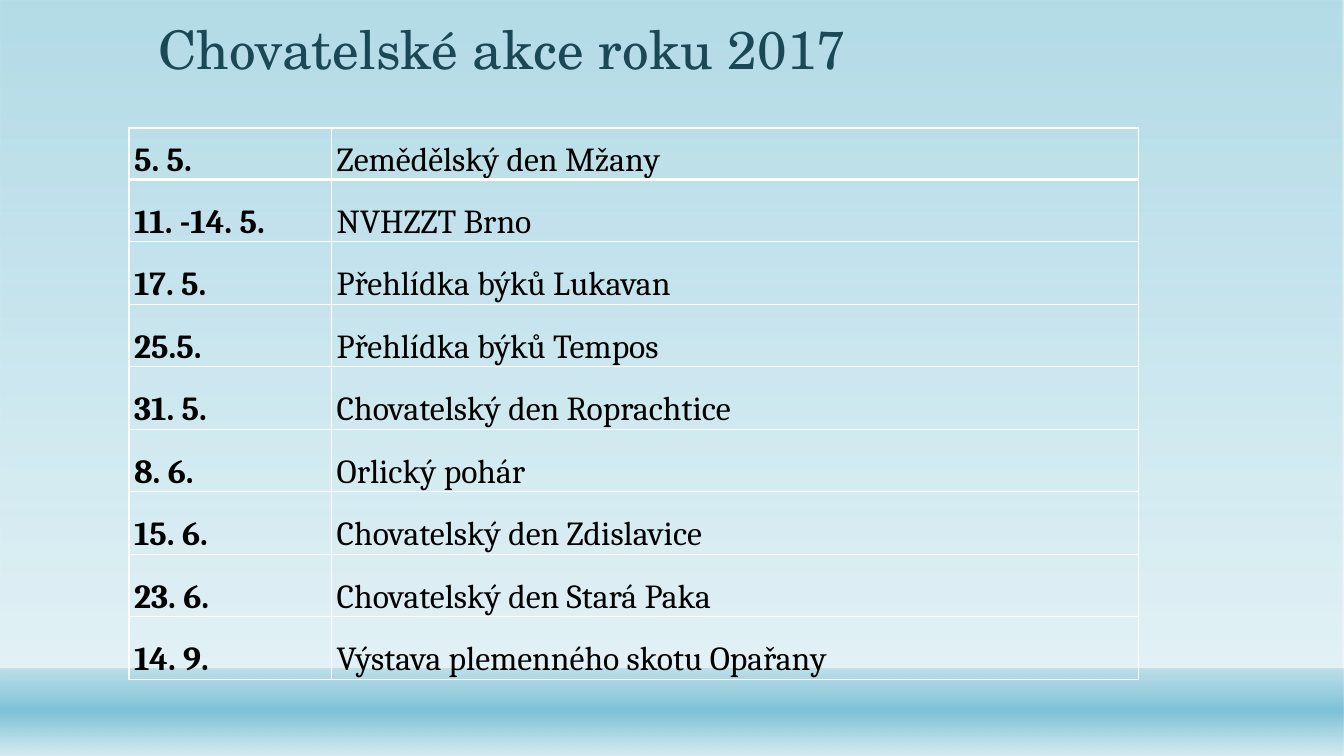
from lxml.etree import SubElement
from pptx import Presentation
from pptx.dml.color import RGBColor
from pptx.enum.shapes import MSO_SHAPE as Shape
from pptx.enum.text import MSO_ANCHOR as Anchor, MSO_AUTO_SIZE as AutoSize, PP_ALIGN as Align
from pptx.oxml.ns import qn
from pptx.util import Inches, Pt

COLORS = {
    "teal": "7DC2D6",
    "pale": "D4EBF1",
    "title": "1B4855",
    "text": "000000",
    "border": "FFFFFF",
}

EVENTS = [
    ("5. 5.", "Zemědělský den Mžany"),
    ("11. -14. 5.", "NVHZZT Brno"),
    ("17. 5.", "Přehlídka býků Lukavan"),
    ("25.5.", "Přehlídka býků Tempos"),
    ("31. 5.", "Chovatelský den Roprachtice"),
    ("8. 6.", "Orlický pohár"),
    ("15. 6.", "Chovatelský den Zdislavice"),
    ("23. 6.", "Chovatelský den Stará Paka"),
    ("14. 9.", "Výstava plemenného skotu Opařany"),
]


class EventPage:
    title_font = {"name": "TeX Gyre Schola", "size": Pt(38), "bold": False}
    cell_font = {"name": "Cambria", "size": Pt(24)}
    cell_format = {
        "vertical_anchor": Anchor.BOTTOM,
        "margin_left": Inches(0.05),
        "margin_right": Inches(0.05),
        "margin_top": 0,
        "margin_bottom": 0,
    }

    def __init__(self, deck):
        self.page = deck.slides.add_slide(deck.slide_layouts[5])

    def apply(self, target, values):
        for name, value in values.items():
            setattr(target, name, value)

    def place(self, left, top, width, height):
        names = ("left", "top", "width", "height")
        return dict(zip(names, map(Inches, (left, top, width, height))))

    def add_text(self, frame, text, spacing, font, color):
        para = frame.paragraphs[0]
        self.apply(para, {"alignment": Align.LEFT, "line_spacing": spacing})
        span = para.add_run()
        span.text = text
        self.apply(span.font, font)
        span.font.color.rgb = RGBColor.from_string(COLORS[color])

    def gradient(self, place, stops):
        box = self.page.shapes.add_shape(Shape.RECTANGLE, **self.place(*place))
        box.shadow.inherit = False
        box.line.fill.background()
        box.fill.gradient()
        box.fill.gradient_angle = 270
        stop_list = box.element.spPr.find(qn("a:gradFill")).find(qn("a:gsLst"))
        for old_stop in list(stop_list):
            stop_list.remove(old_stop)
        for position, color, opacity in stops:
            stop = SubElement(stop_list, qn("a:gs"), pos=str(position * 1000))
            tint = SubElement(stop, qn("a:srgbClr"), val=COLORS[color])
            SubElement(tint, qn("a:alpha"), val=str(opacity * 1000))

    def title(self, text, place):
        box = self.page.shapes.title
        self.apply(box, self.place(*place))
        self.apply(box.text_frame, {
            "vertical_anchor": Anchor.BOTTOM,
            "word_wrap": True,
            "auto_size": AutoSize.NONE,
        })
        self.add_text(box.text_frame, text, 0.9, self.title_font, "title")
        self.page.shapes.element.append(box.element)

    def borders(self, cell, widths):
        properties = cell._tc.get_or_add_tcPr()
        for side, width in zip("LRTB", widths):
            line = SubElement(properties, qn("a:ln" + side), w=str(int(Pt(width))))
            fill = SubElement(line, qn("a:solidFill"))
            SubElement(fill, qn("a:srgbClr"), val=COLORS["border"])

    def table(self, events, place, widths, heights):
        frame = self.page.shapes.add_table(len(events), len(widths), **self.place(*place))
        table = frame.table
        self.apply(table, {"first_row": False, "horz_banding": False})
        for column, width in zip(table.columns, widths):
            column.width = Inches(width)
        for index, (row, height) in enumerate(zip(table.rows, heights)):
            row.height = Inches(height)
            edges = (1, 1, 3 if index == 1 else 1, 3 if index == 0 else 1)
            for column, text in enumerate(events[index]):
                cell = table.cell(index, column)
                self.apply(cell, self.cell_format)
                self.borders(cell, edges)
                cell.fill.background()
                font = {**self.cell_font, "bold": column == 0}
                self.add_text(cell.text_frame, text, 1.07, font, "text")


def main():
    deck = Presentation()
    deck.slide_width = Inches(13.33)
    deck.slide_height = Inches(7.5)
    page = EventPage(deck)
    page.gradient((0, 0, 13.33, 7.5), [(0, "teal", 58), (88, "pale", 65)])
    page.gradient((0, 6.63, 13.33, 0.87),
                  [(1, "teal", 38), (49, "teal", 100), (100, "pale", 89)])
    page.title("Chovatelské akce roku 2017", (1.47, 0.1, 10.4, 0.75))
    heights = [0.51] + [0.62] * (len(EVENTS) - 1)
    page.table(EVENTS, (1.28, 1.27, 10.01, sum(heights)), (2.01, 8), heights)
    deck.save("out.pptx")


if __name__ == "__main__":
    main()
